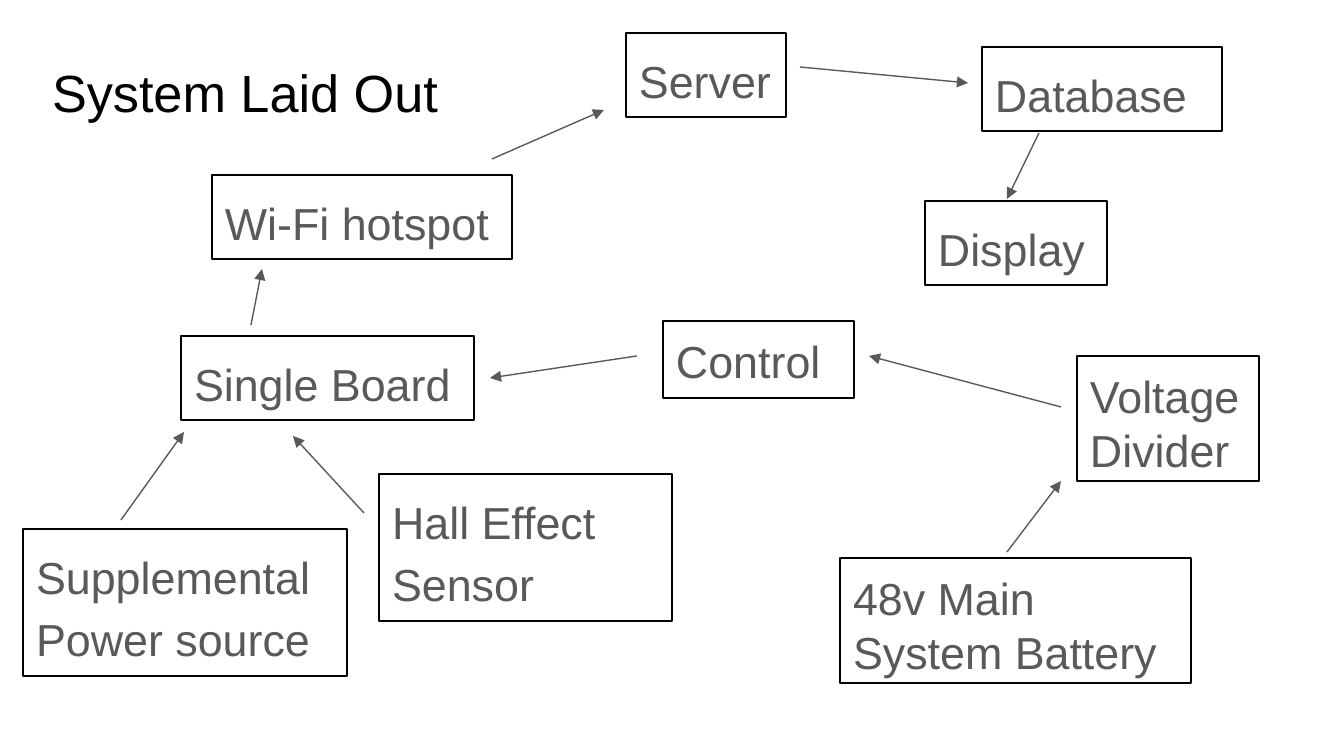
from lxml import etree
from pptx import Presentation
from pptx.dml.color import RGBColor
from pptx.enum.shapes import MSO_CONNECTOR, MSO_SHAPE
from pptx.enum.text import MSO_ANCHOR, PP_ALIGN
from pptx.oxml.ns import qn
from pptx.util import Emu, Pt

SCALE = 914400 / 134.4
INSET = 13
BLACK, GREY, WHITE = "000000", "595959", "FFFFFF"
LOOSE = {"line_spacing": 1.15, "space_after": Pt(16)}
TIGHT = {"line_spacing": 1.0, "space_after": Pt(0)}

NODES = [
    ("Single Board", (181, 336, 293, 84), LOOSE),
    ("Hall Effect Sensor", (379, 474, 293, 147), LOOSE),
    ("Control", (663, 321, 191, 77), TIGHT),
    ("Supplemental Power source", (23, 529, 324, 147), LOOSE),
    ("48v Main System Battery", (840, 558, 351, 125), TIGHT),
    ("Voltage Divider", (1077, 356, 182, 125), TIGHT),
    ("Wi-Fi hotspot", (212, 175, 300, 84), LOOSE),
    ("Server", (626, 33, 160, 84), LOOSE),
    ("Database", (982, 47, 240, 84), LOOSE),
    ("Display", (925, 201, 182, 84), LOOSE),
]
ARROWS = [
    ((364, 513), (293, 436)),
    ((121, 520), (184, 432)),
    ((1061, 407), (869, 356)),
    ((1007, 552), (1061, 481)),
    ((637, 356), (490, 378)),
    ((251, 325), (262, 269)),
    ((492, 159), (604, 110)),
    ((800, 67), (968, 83)),
    ((1039, 133), (1007, 199)),
]


def px(length):
    """Turn a length in px into EMU."""
    return Emu(round(length * SCALE))


def color(value):
    """Turn a hex string into a colour."""
    return RGBColor.from_string(value)


def set_all(target, formats):
    """Set every attribute of a format dict on the target."""
    for name, value in formats.items():
        setattr(target, name, value)


def write_text(shape, text, size, ink, spacing):
    """Write one wrapped, left-aligned paragraph at the top of a shape."""
    frame = shape.text_frame
    margins = {f"margin_{side}": px(INSET) for side in ("left", "top", "right", "bottom")}
    set_all(frame, {"word_wrap": True, "vertical_anchor": MSO_ANCHOR.TOP, **margins})
    paragraph = frame.paragraphs[0]
    set_all(paragraph, {"text": text, "alignment": PP_ALIGN.LEFT, **spacing})
    set_all(paragraph.font, {"name": "Arial", "size": Pt(size)})
    paragraph.font.color.rgb = color(ink)


def add_title(slide, text, box):
    """Place the slide title in its box."""
    shape = slide.shapes.add_textbox(*map(px, box))
    write_text(shape, text, 28, BLACK, TIGHT)


def add_node(slide, text, box, spacing):
    """Place one outlined component of the system in its box."""
    shape = slide.shapes.add_shape(MSO_SHAPE.RECTANGLE, *map(px, box))
    shape.shadow.inherit = False
    shape.fill.background()
    shape.line.color.rgb = color(BLACK)
    shape.line.width = Pt(0.75)
    write_text(shape, text, 24, GREY, spacing)


def add_arrow(slide, start, end):
    """Draw a thin arrow from start to end."""
    connector = slide.shapes.add_connector(
        MSO_CONNECTOR.STRAIGHT, *map(px, start + end)
    )
    connector.line.color.rgb = color(GREY)
    connector.line.width = Pt(0.75)
    outline = connector.line._get_or_add_ln()
    etree.SubElement(outline, qn("a:tailEnd"), type="triangle")
    etree.SubElement(connector._element.spPr, qn("a:effectLst"))


def add_system_slide(presentation):
    """Build the system layout slide."""
    slide = presentation.slides.add_slide(presentation.slide_layouts[6])
    slide.background.fill.solid()
    slide.background.fill.fore_color.rgb = color(WHITE)
    add_title(slide, "System Laid Out", (39, 47, 435, 84))
    for text, box, spacing in NODES:
        add_node(slide, text, box, spacing)
    for start, end in ARROWS:
        add_arrow(slide, start, end)


def main():
    """Create and save the presentation."""
    presentation = Presentation()
    set_all(presentation, {"slide_width": px(1344), "slide_height": px(756)})
    add_system_slide(presentation)
    presentation.save("out.pptx")


if __name__ == "__main__":
    main()
